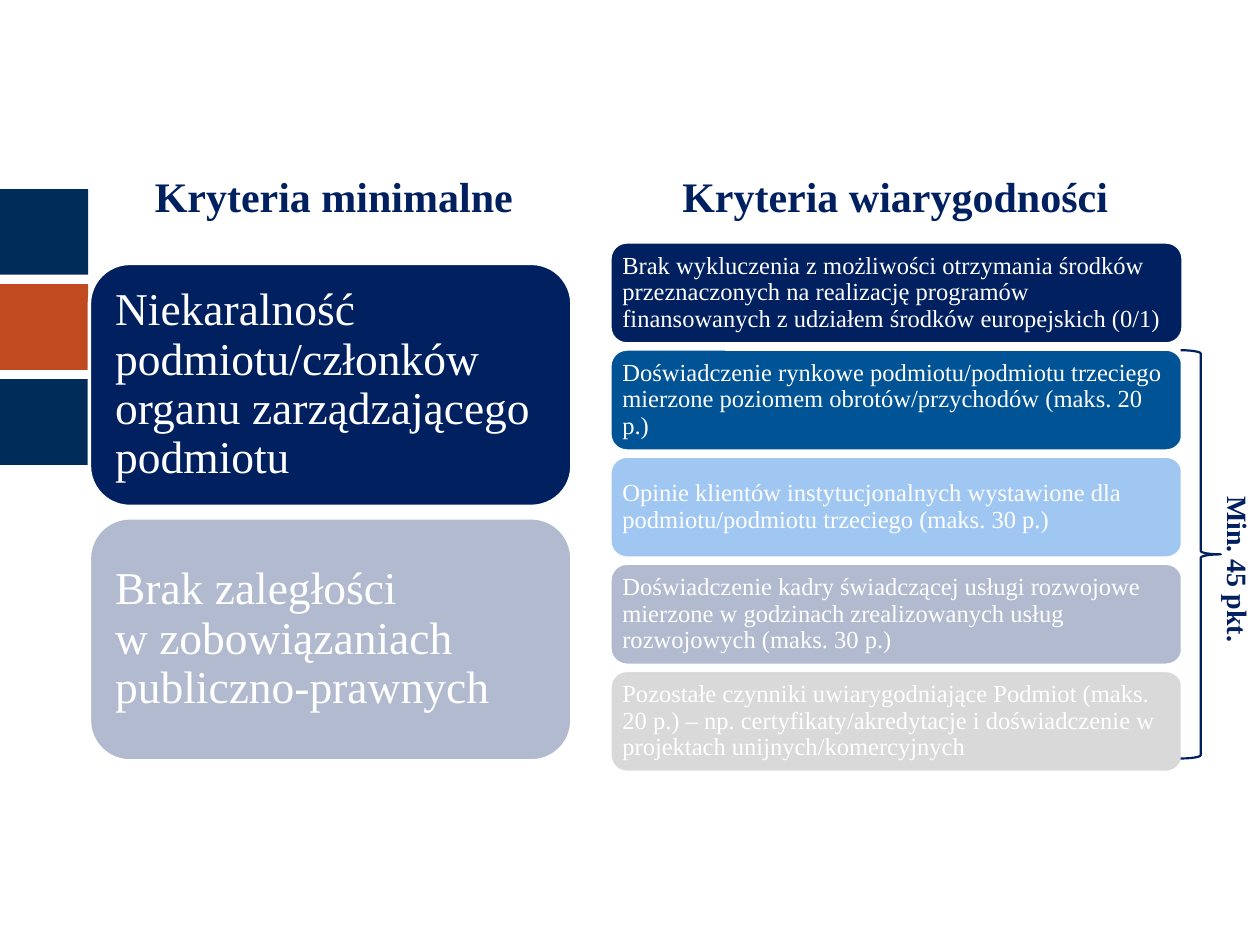
from pptx import Presentation
from pptx.dml.color import RGBColor
from pptx.enum.shapes import MSO_SHAPE
from pptx.enum.text import MSO_ANCHOR, MSO_AUTO_SIZE, PP_ALIGN
from pptx.util import Inches, Pt

RECT, ROUNDED, BRACE = MSO_SHAPE.RECTANGLE, MSO_SHAPE.ROUNDED_RECTANGLE, MSO_SHAPE.RIGHT_BRACE
TOP, MIDDLE = MSO_ANCHOR.TOP, MSO_ANCHOR.MIDDLE
LEFT, CENTER = PP_ALIGN.LEFT, PP_ALIGN.CENTER
GROW = MSO_AUTO_SIZE.SHAPE_TO_FIT_TEXT

WHITE = RGBColor(0xFF, 0xFF, 0xFF)
NAVY = RGBColor(0x00, 0x20, 0x60)
DARK_BLUE = RGBColor(0x00, 0x2C, 0x5A)
ORANGE = RGBColor(0xC1, 0x4B, 0x20)
BLUE = RGBColor(0x00, 0x53, 0x95)
LIGHT_BLUE = RGBColor(0xA0, 0xC7, 0xF2)
GREY_BLUE = RGBColor(0xB2, 0xBA, 0xCF)
GREY = RGBColor(0xD9, 0xD9, 0xD9)

SIDE_COLORS = [DARK_BLUE, ORANGE, DARK_BLUE]

COLUMNS = [
    {"left": 0.71, "top": 2.09, "width": 3.83, "height": 1.93, "pitch": 2.02,
     "size": 26, "inset": 0.11, "criteria": [
         ("Niekaralność podmiotu/członków organu zarządzającego podmiotu", NAVY),
         ("Brak zaległości \vw zobowiązaniach publiczno-prawnych", GREY_BLUE),
     ]},
    {"left": 4.84, "top": 1.92, "width": 4.55, "height": 0.81, "pitch": 0.85,
     "size": 14, "inset": 0.06, "criteria": [
         ("Brak wykluczenia z możliwości otrzymania środków przeznaczonych na "
          "realizację programów finansowanych z udziałem środków europejskich (0/1)", NAVY),
         ("Doświadczenie rynkowe podmiotu/podmiotu trzeciego mierzone poziomem "
          "obrotów/przychodów (maks. 20 p.)", BLUE),
         ("Opinie klientów instytucjonalnych wystawione dla podmiotu/podmiotu "
          "trzeciego (maks. 30 p.)", LIGHT_BLUE),
         ("Doświadczenie kadry świadczącej usługi rozwojowe mierzone w godzinach "
          "zrealizowanych usług rozwojowych (maks. 30 p.)", GREY_BLUE),
         ("Pozostałe czynniki uwiarygodniające Podmiot (maks. 20 p.) – np. "
          "certyfikaty/akredytacje i doświadczenie w projektach "
          "unijnych/komercyjnych", GREY),
     ]},
]

HEADINGS = [
    ("Kryteria minimalne", (0.95, 1.3, 3.4, 0.51)),
    ("Kryteria wiarygodności", (4.84, 1.3, 4.53, 0.51)),
]
THRESHOLD = ("Min. 45 pkt.", (9.54, 3.84, 0.47, 1.28))


def add_filled_shape(kind, area, fill, line=None, line_width=0):
    shape = slide.shapes.add_shape(kind, *map(Inches, area))
    shape.shadow.inherit = False
    shape.fill.solid()
    shape.fill.fore_color.rgb = fill
    if line is None:
        shape.line.fill.background()
    else:
        shape.line.color.rgb = line
        shape.line.width = Pt(line_width)
    return shape


def write_text(shape, text, size, color, bold=False, align=LEFT, anchor=TOP,
               insets=(0.1, 0.05), spacing=1.0):
    frame = shape.text_frame
    across, down = map(Inches, insets)
    frame_format = {"word_wrap": True, "vertical_anchor": anchor,
                    "margin_left": across, "margin_right": across,
                    "margin_top": down, "margin_bottom": down}
    for name, value in frame_format.items():
        setattr(frame, name, value)
    para = frame.paragraphs[0]
    para.text = text
    para.alignment = align
    para.line_spacing = spacing
    for span in para.runs:
        font_format = {"name": "Times New Roman", "size": Pt(size), "bold": bold}
        for name, value in font_format.items():
            setattr(span.font, name, value)
        span.font.color.rgb = color


def add_label(text, area, size, align=LEFT):
    box = slide.shapes.add_textbox(*map(Inches, area))
    write_text(box, text, size, NAVY, bold=True, align=align)
    box.text_frame.auto_size = GROW
    return box


deck = Presentation()
deck.slide_width, deck.slide_height = Inches(10), Inches(7.5)
slide = deck.slides.add_slide(deck.slide_layouts[6])

for row, color in enumerate(SIDE_COLORS):
    add_filled_shape(RECT, (0, 1.5 + row * 0.755, 0.7, 0.68), color)

for column in COLUMNS:
    for row, (text, color) in enumerate(column["criteria"]):
        top = column["top"] + row * column["pitch"]
        area = (column["left"], top, column["width"], column["height"])
        card = add_filled_shape(ROUNDED, area, color, WHITE, 2)
        write_text(card, text, column["size"], WHITE, anchor=MIDDLE,
                   insets=(column["inset"], column["inset"]), spacing=0.9)

add_filled_shape(BRACE, (9.37, 2.78, 0.32, 3.24), WHITE, NAVY, 1.25)
threshold_frame = add_label(*THRESHOLD, 16).text_frame
threshold_frame.word_wrap = False
threshold_frame._txBody.bodyPr.set("vert", "vert")

for text, area in HEADINGS:
    add_label(text, area, 24, CENTER)

deck.save("out.pptx")
